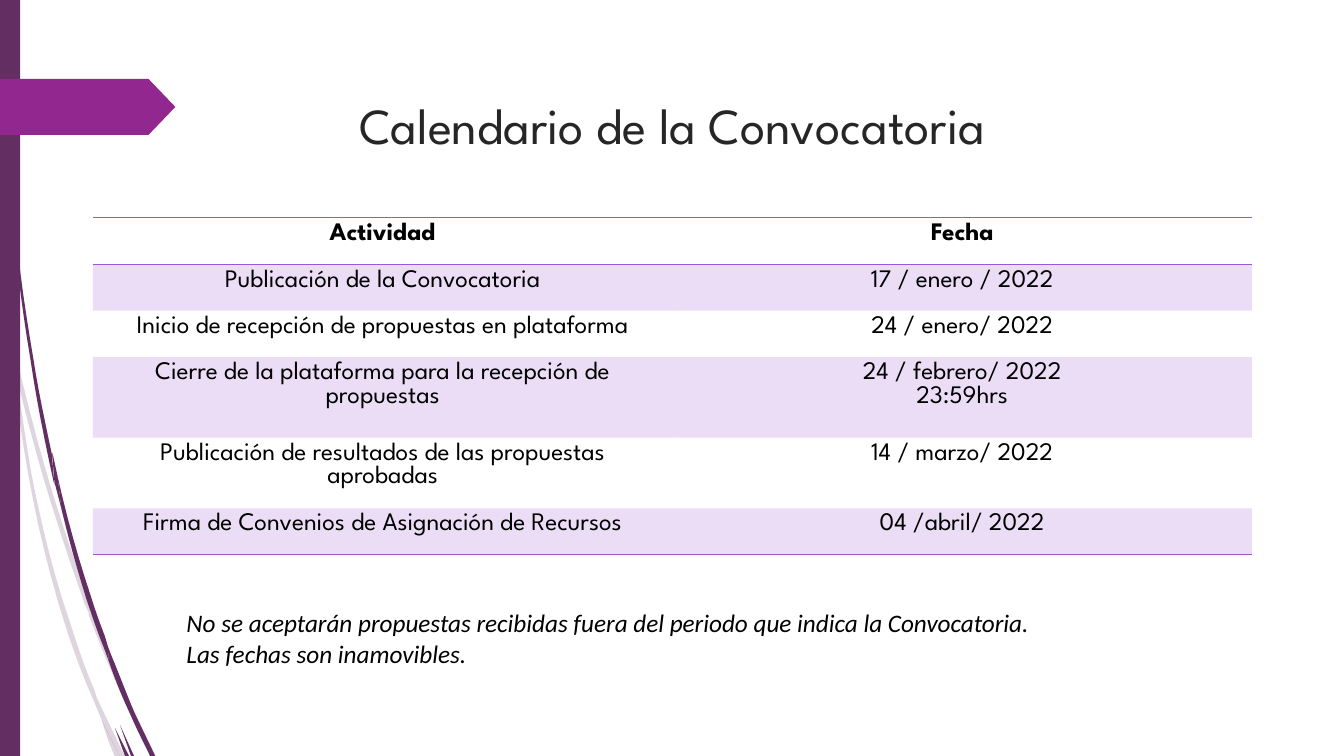
from lxml import etree
from pptx import Presentation
from pptx import util as u
from pptx.dml.color import RGBColor
from pptx.enum import shapes, text
from pptx.oxml import ns

PLUM, MAGENTA, LILAC, INK, BLACK = "632E62", "92278F", "9B57D3", "262626", "000000"
HEAD = "League Spartan"
GRID = 0.0254
STEPS = 6

PALE_WISPS = [
    [(11, 350), (10, 341, 10, 331, 9, 322), (6, 309, 3, 295, 0, 282), (0, 299),
     (3, 314, 7, 329, 10, 344), (11, 350)],
    [(58, 522), (66, 548, 75, 573, 84, 599), (85, 586), (77, 564, 69, 542, 62, 520),
     (43, 463, 28, 404, 14, 345), (17, 376), (29, 425, 42, 474, 58, 522)],
    [(92, 607), (88, 596), (88, 610), (99, 639, 110, 666, 123, 694),
     (131, 713, 141, 732, 150, 751), (155, 751), (145, 731, 136, 712, 127, 692),
     (115, 664, 103, 636, 92, 607)],
    [(119, 751), (124, 751), (105, 711)],
    [(93, 683), (84, 662, 77, 641, 70, 619), (53, 570, 41, 520, 31, 469),
     (26, 438, 21, 407, 17, 376), (11, 350), (15, 390, 21, 430, 28, 470),
     (37, 521, 49, 571, 65, 621), (73, 646, 82, 670, 92, 693), (101, 714), (99, 707),
     (96, 699, 94, 691, 93, 683)],
    [(101, 714), (104, 726, 109, 739, 114, 751), (119, 751)],
    [(88, 608), (88, 596), (85, 586), (84, 599)],
    [(96, 692), (93, 683), (94, 691, 96, 699, 99, 707), (101, 714),
     (106, 726, 113, 739, 119, 751), (105, 711)],
]
DARK_WISPS = [
    [(4, 110), (6, 151, 9, 192, 14, 233), (18, 274, 23, 314, 30, 355),
     (36, 396, 44, 436, 53, 477), (54, 481), (52, 457), (52, 453),
     (45, 420, 38, 388, 33, 355), (26, 314, 20, 274, 16, 232),
     (11, 191, 7, 151, 5, 109), (4, 89, 3, 69, 2, 48), (1, 32, 1, 16, 1, 0), (0, 0),
     (0, 16, 1, 32, 1, 48), (2, 69, 2, 89, 4, 110)],
    [(85, 592), (91, 610, 97, 628, 104, 645), (104, 631), (99, 618, 94, 604, 90, 591),
     (77, 552, 66, 512, 57, 472), (61, 505), (68, 534, 76, 563, 85, 592)],
    [(110, 649), (107, 641), (108, 656), (114, 674, 121, 691, 129, 708),
     (135, 722, 142, 736, 149, 750), (154, 750), (147, 735, 140, 721, 133, 706),
     (125, 687, 118, 668, 110, 649)],
    [(130, 750), (133, 750), (119, 719)],
    [(54, 478), (61, 505), (57, 472), (52, 449), (52, 453)],
    [(114, 722), (124, 750), (128, 750)],
    [(104, 645), (108, 656), (107, 641), (104, 631)],
]
CALENDAR = [
    ("Actividad", "Fecha", 1.17),
    ("Publicación de la Convocatoria", "17 / enero / 2022", 1.17),
    ("Inicio de recepción de propuestas en plataforma", "24 / enero/ 2022", 1.17),
    ("Cierre de la plataforma para la recepción de propuestas",
     "24 / febrero/ 2022\n23:59hrs", 2.03),
    ("Publicación de resultados de las propuestas aprobadas", "14 / marzo/ 2022", 1.17),
    ("Firma de Convenios de Asignación de Recursos", "04 /abril/ 2022", 1.17),
]
NOTICE = ("No se aceptarán propuestas recibidas fuera del periodo que indica la Convocatoria.\n"
          "Las fechas son inamovibles.")


def rgb(value):
    """Turn a hex string into a colour."""
    return RGBColor.from_string(value)


def paint(fill, value, alpha=100):
    """Fill solidly, with an opacity in percent."""
    fill.solid()
    fill.fore_color.rgb = rgb(value)
    return alpha


def fade(element, alpha):
    """Give the first solid colour of an element an opacity in percent."""
    clr = next(element.iter(ns.qn("a:srgbClr")))
    etree.SubElement(clr, ns.qn("a:alpha")).set("val", str(alpha * 1000))


def plain(sp, value):
    """Leave a shape with only a flat fill."""
    sp.shadow.inherit = False
    paint(sp.fill, value)
    sp.line.fill.background()


def write(tf, content, font, size, color, align, bold=False, italic=False, spacing=None):
    """Write one paragraph for each line of the content."""
    tf.word_wrap = True
    for i, line in enumerate(content.split("\n")):
        p = tf.paragraphs[0] if i == 0 else tf.add_paragraph()
        p.alignment = align
        if spacing:
            p.line_spacing = spacing
        r = p.add_run()
        r.text = line
        r.font.name, r.font.size = font, u.Pt(size)
        r.font.bold, r.font.italic = bold, italic
        r.font.color.rgb = rgb(color)


def outline(path):
    """Flatten a path of lines and cubic curves into points."""
    pts = [path[0]]
    for seg in path[1:]:
        if len(seg) == 2:
            pts.append(seg)
            continue
        a, b, c, d = pts[-1], seg[:2], seg[2:4], seg[4:]
        for k in range(1, STEPS + 1):
            t = k / STEPS
            w = ((1 - t) ** 3, 3 * t * (1 - t) ** 2, 3 * t * t * (1 - t), t ** 3)
            pts.append(tuple(sum(m * q[i] for m, q in zip(w, (a, b, c, d))) for i in (0, 1)))
    return pts


def wisps(s, box, paths, alpha):
    """Draw a tuft of curved blades from the corner of the box."""
    x, y = box[:2]
    for path in paths:
        pts = [(u.Cm(x + px * GRID), u.Cm(y + py * GRID)) for px, py in outline(path)]
        fb = s.shapes.build_freeform(*pts[0])
        fb.add_line_segments(pts[1:], close=True)
        sp = fb.convert_to_shape()
        plain(sp, PLUM)
        if alpha < 100:
            fade(sp.element.spPr, alpha)


def side_band(s, box):
    """Draw the left band, its wisps and the pointed tag."""
    x, y, w, h = box
    wisps(s, box, PALE_WISPS, 20)
    wisps(s, box, DARK_WISPS, 100)
    band = s.shapes.add_shape(shapes.MSO_SHAPE.RECTANGLE, u.Cm(x), u.Cm(y), u.Cm(w), u.Cm(h))
    plain(band, PLUM)
    tag = s.shapes.add_shape(shapes.MSO_SHAPE.PENTAGON, u.Cm(x), u.Cm(y + 1.99),
                             u.Cm(4.42), u.Cm(1.41))
    tag.adjustments[0] = 0.48
    plain(tag, MAGENTA)


def text_region(s, box, content, anchor, **style):
    """Place a text box that fills the box."""
    tf = s.shapes.add_textbox(*map(u.Cm, box)).text_frame
    tf.vertical_anchor = anchor
    write(tf, content, **style)


def rule(cell, side):
    """Draw a thin lilac border on one side of a cell."""
    ln = etree.Element(ns.qn("a:" + side), w=str(u.Pt(1)))
    fill = etree.SubElement(ln, ns.qn("a:solidFill"))
    etree.SubElement(fill, ns.qn("a:srgbClr"), val=LILAC)
    cell._tc.get_or_add_tcPr().insert(0, ln)


def calendar(s, box):
    """Place the table of activities and dates."""
    gf = s.shapes.add_table(len(CALENDAR), 2, *map(u.Cm, box))
    style = next(gf._element.iter(ns.qn("a:tableStyleId")))
    style.text = "{2D5ABB26-0587-4C30-8999-92F81FD0307C}"
    last = len(CALENDAR) - 1
    for i, (activity, date, height) in enumerate(CALENDAR):
        gf.table.rows[i].height = u.Cm(height)
        for j, content in enumerate((activity, date)):
            cell = gf.table.cell(i, j)
            write(cell.text_frame, content, HEAD, 18, BLACK, text.PP_ALIGN.CENTER, bold=i == 0)
            if i % 2:
                paint(cell.fill, LILAC)
                fade(cell._tc.tcPr, 20)
            else:
                cell.fill.background()
            if i in (0, last):
                rule(cell, "lnB")
            if i == 0:
                rule(cell, "lnT")


def main():
    """Build the slide and save it."""
    prs = Presentation()
    prs.slide_width, prs.slide_height = u.Cm(33.87), u.Cm(19.05)
    s = prs.slides.add_slide(prs.slide_layouts[6])
    side_band(s, (0, 0, 0.51, 19.05))
    text_region(s, (2.34, 2.31, 29.21, 1.83), "Calendario de la Convocatoria",
                text.MSO_ANCHOR.MIDDLE, font=HEAD, size=36, color=INK,
                align=text.PP_ALIGN.CENTER, spacing=0.9)
    calendar(s, (2.34, 5.49, 29.21, 7.88))
    text_region(s, (4.45, 15.19, 28.09, 1.8), NOTICE, text.MSO_ANCHOR.TOP, font="Calibri",
                size=18, color=BLACK, align=text.PP_ALIGN.LEFT, italic=True)
    prs.save("out.pptx")


if __name__ == "__main__":
    main()
